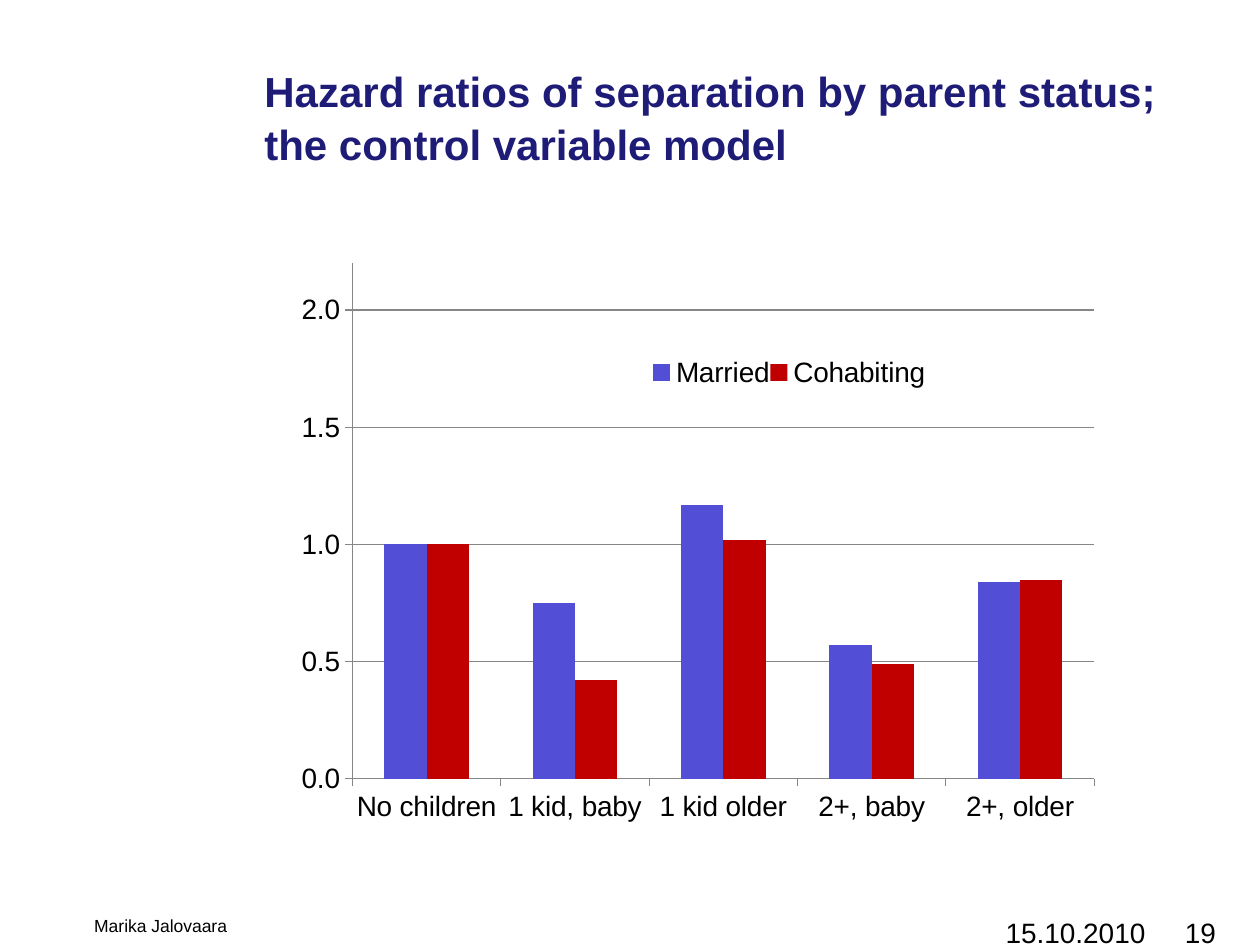
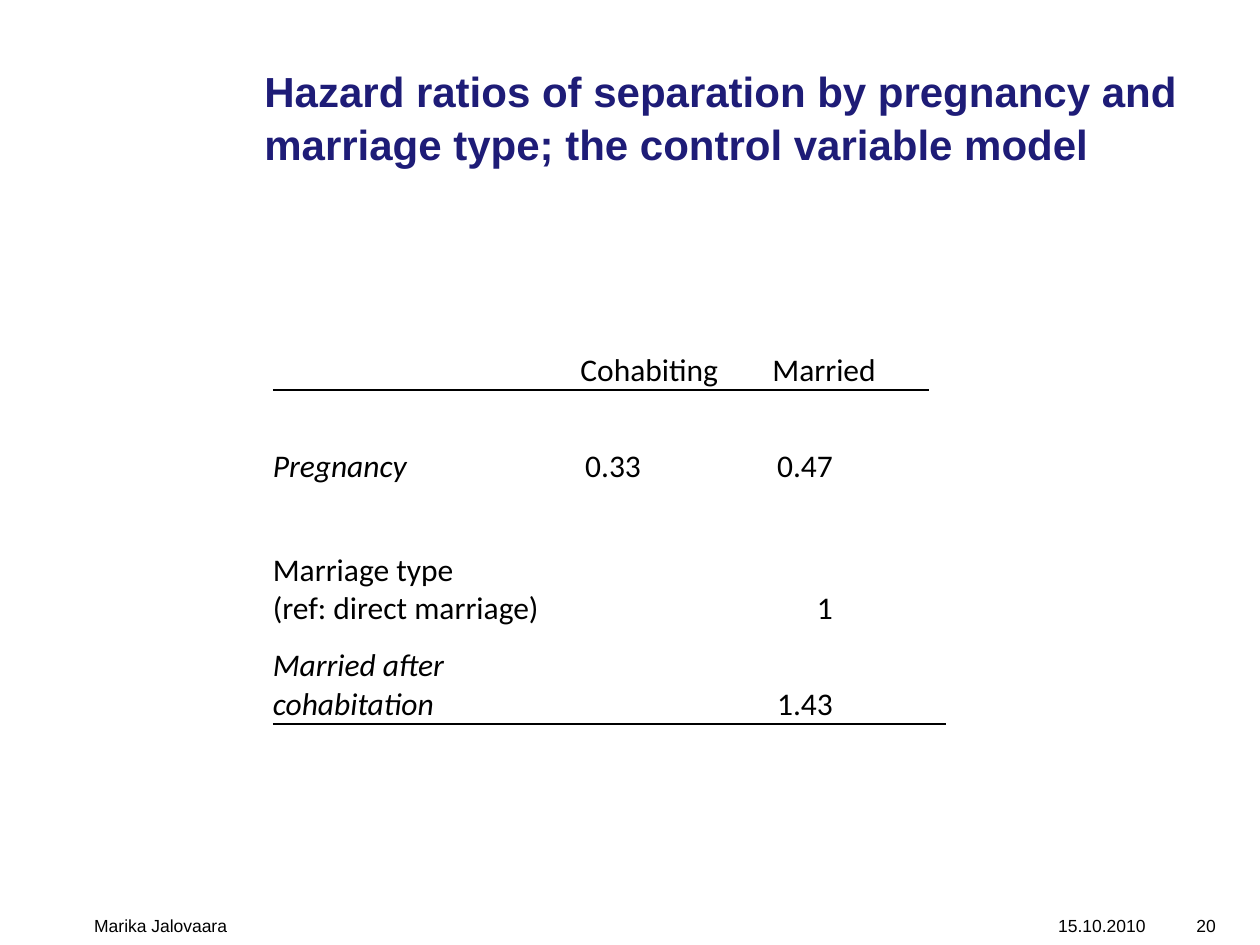
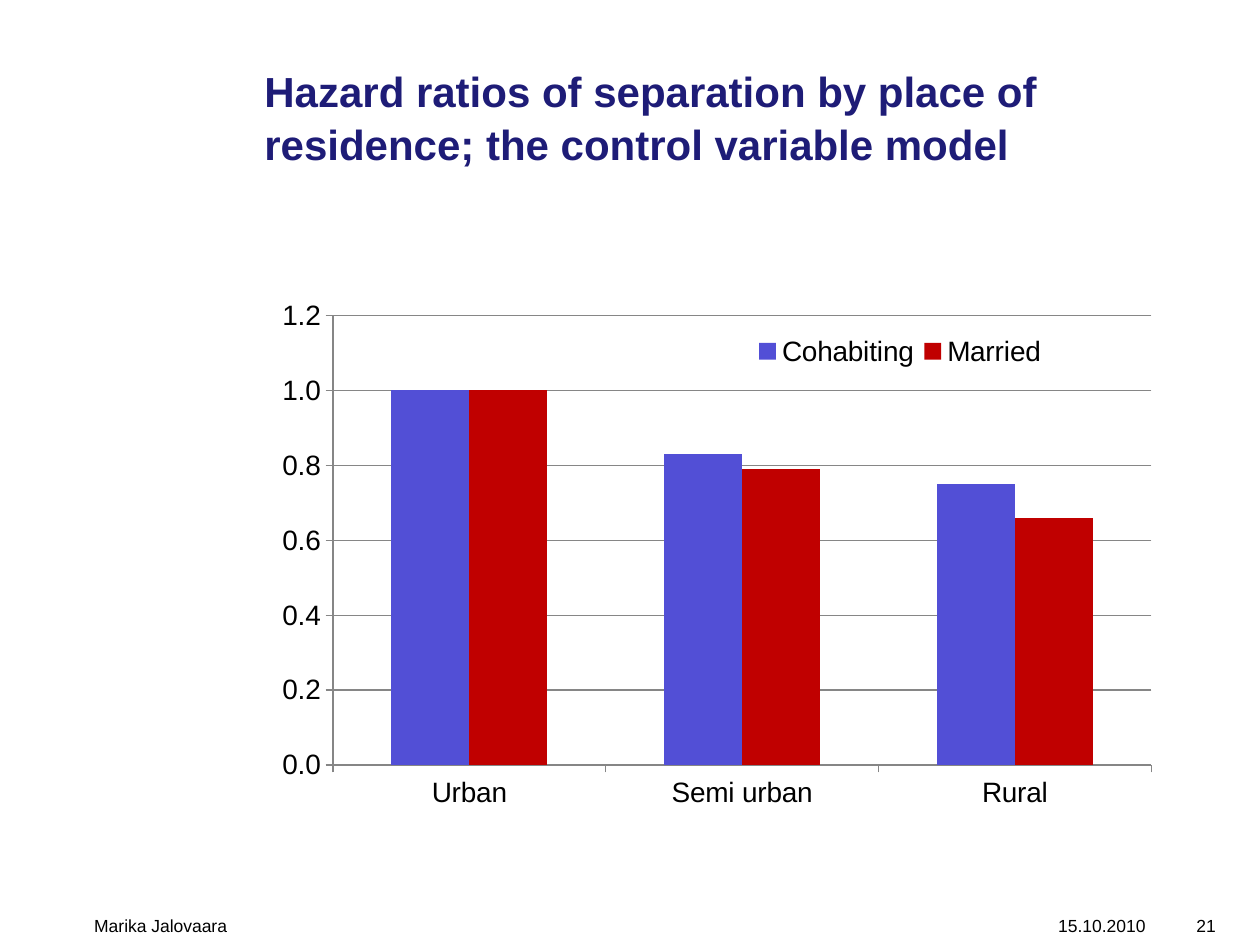
import pptx
import pptx.chart.data
import pptx.dml.color
import pptx.enum.chart
import pptx.enum.text
import pptx.oxml
import pptx.oxml.ns
import pptx.util

Cm, Pt = pptx.util.Cm, pptx.util.Pt
NAVY, BLACK, GREY = "1E1C77", "000000", "868686"
BLUE, RED = "524FD6", "C00000"
LEFT, RIGHT = pptx.enum.text.PP_ALIGN.LEFT, pptx.enum.text.PP_ALIGN.RIGHT
BOTTOM = pptx.enum.text.MSO_ANCHOR.BOTTOM


def tint(code):
    return pptx.dml.color.RGBColor.from_string(code)


def write(frame, text, size=10, font="Arial", color=BLACK, bold=False,
          slant=False, align=LEFT, lead=None):
    frame.word_wrap = True
    para = frame.paragraphs[0]
    para.text = text
    para.alignment = align
    if lead:
        para.line_spacing = Pt(lead)
    for run in para.runs:
        run.font.size = Pt(size)
        run.font.name = font
        run.font.bold = bold
        run.font.italic = slant
        run.font.color.rgb = tint(color)


deck = pptx.Presentation()
deck.slide_width, deck.slide_height = Cm(25.4), Cm(19.05)

# Titles and footers; the first slide has a larger date and number
heads = [
    ("Hazard ratios of separation by parent status; the control variable model", 16),
    ("Hazard ratios of separation by pregnancy and marriage type; the control variable model", 10),
    ("Hazard ratios of separation by place of residence; the control variable model", 10),
]
slides = []
for page, (head, size) in enumerate(heads, 19):
    slide = deck.slides.add_slide(deck.slide_layouts[6])
    slides.append(slide)
    frame = slide.shapes.add_textbox(Cm(5.08), Cm(0.43), Cm(19.48), Cm(3.1)).text_frame
    frame.vertical_anchor = BOTTOM
    write(frame, head, size=24, color=NAVY, bold=True, lead=30)
    for text, left, width, points, align in [
        ("15.10.2010", 19.41, 3.68, size, RIGHT),
        ("Marika Jalovaara", 1.9, 17.4, 10, LEFT),
        (str(page), 23.11, 1.4, size, RIGHT),
    ]:
        frame = slide.shapes.add_textbox(Cm(left), Cm(18.33), Cm(width), Cm(0.56)).text_frame
        frame.margin_left = frame.margin_right = 0
        write(frame, text, size=points, align=align)

# Column charts: slide, place, top and step of scale, legend box, data
charts = [
    (slides[0], (5.55, 4.56, 17.27, 13.11), 2.2, 0.5, (0.44, 0.19, 0.32, 0.07),
     ["No children", "1 kid, baby", "1 kid older", "2+, baby", "2+, older"],
     {"Married": [1, 0.75, 1.17, 0.57, 0.84],
      "Cohabiting": [1, 0.42, 1.02, 0.49, 0.85]}),
    (slides[2], (5, 5.71, 19.05, 11.43), 1.2, 0.2, (0.53, 0.08, 0.32, 0.08),
     ["Urban", "Semi urban", "Rural"],
     {"Cohabiting": [1, 0.83, 0.75], "Married": [1, 0.79, 0.66]}),
]
for slide, place, top, step, box, names, rows in charts:
    data = pptx.chart.data.CategoryChartData()
    data.categories = names
    for name, nums in rows.items():
        data.add_series(name, nums)
    kind = pptx.enum.chart.XL_CHART_TYPE.COLUMN_CLUSTERED
    chart = slide.shapes.add_chart(kind, *map(Cm, place), data).chart
    chart.has_title = False
    chart.font.size, chart.font.name = Pt(16), "Arial"
    chart.font.color.rgb = tint(BLACK)

    plot = chart.plots[0]
    plot.gap_width, plot.overlap = 150, 0
    plot.vary_by_categories = False
    for series, color in zip(plot.series, [BLUE, RED]):
        series.format.fill.solid()
        series.format.fill.fore_color.rgb = tint(color)

    # The red series counts as the first
    for order, rank in zip(chart._chartSpace.xpath("c:chart//c:ser/c:order"), "10"):
        order.set("val", rank)

    scale = chart.value_axis
    scale.minimum_scale, scale.maximum_scale, scale.major_unit = 0, top, step
    scale.tick_labels.number_format = "0.0"
    scale.tick_labels.number_format_is_linked = False
    scale.has_major_gridlines = True
    for part in [scale, scale.major_gridlines, chart.category_axis]:
        part.format.line.color.rgb = tint(GREY)

    chart.has_legend = True
    chart.legend.position = pptx.enum.chart.XL_LEGEND_POSITION.RIGHT
    chart.legend.include_in_layout = True

    # Fixed places of the plot and the legend
    area = chart._chartSpace.xpath("c:chart/c:plotArea")[0]
    key = chart._chartSpace.xpath("c:chart/c:legend")[0]
    for node, spot, inner, sides in [
        (area, 0, '<c:layoutTarget val="inner"/>', (0.09, 0.057, 0.866, 0.793)),
        (key, 1, "", box),
    ]:
        for old in node.xpath("c:layout"):
            node.remove(old)
        marks = "".join(f'<c:{tag} val="{num}"/>' for tag, num in zip("xywh", sides))
        node.insert(spot, pptx.oxml.parse_xml(
            f'<c:layout {pptx.oxml.ns.nsdecls("c")}><c:manualLayout>{inner}'
            f'<c:xMode val="edge"/><c:yMode val="edge"/>{marks}'
            '</c:manualLayout></c:layout>'))

# Table of pregnancy and marriage type
wide = [6.2, 1.22, 1.93, 0.36, 0.36, 1.22, 1.93, 0.36]
high = [1.93, 1.93, 0.94, 1.93, 1.93]
table = slides[1].shapes.add_table(
    len(high), len(wide), Cm(5.5), Cm(5.93), Cm(sum(wide)), Cm(sum(high))).table
table.first_row = table.horz_banding = False
table._tbl.xpath("a:tblPr/a:tableStyleId")[0].text = "{2D5ABB26-0587-4C30-8999-92F81FD0307C}"
for col, size in zip(table.columns, wide):
    col.width = Cm(size)
for row, size in zip(table.rows, high):
    row.height = Cm(size)
for row, col in [(0, 1), (0, 5), (1, 2), (2, 2), (2, 6), (4, 6)]:
    table.cell(row, col).merge(table.cell(row, col + 1))

# Rules: row to side and number of cells; every other side has no line
rules = {0: ("lnB", 7), 1: ("lnT", 7), 4: ("lnB", 8)}
ink = f'<a:solidFill><a:srgbClr val="{BLACK}"/></a:solidFill>'
for row in range(len(high)):
    ruled, count = rules.get(row, ("", 0))
    for col in range(len(wide)):
        cell = table.cell(row, col)
        cell.margin_left = cell.margin_right = cell.margin_top = cell.margin_bottom = 0
        cell.vertical_anchor = BOTTOM
        for side in ["lnL", "lnR", "lnT", "lnB"]:
            fill = ink if side == ruled and col < count else "<a:noFill/>"
            cell._tc.get_or_add_tcPr().append(pptx.oxml.parse_xml(
                f'<a:{side} {pptx.oxml.ns.nsdecls("a")} w="12700">{fill}</a:{side}>'))
        cell.fill.background()

for row, col, text, slant in [
    (0, 1, "Cohabiting", False),
    (0, 5, "Married", False),
    (1, 0, "Pregnancy", True),
    (1, 1, "0.33", False),
    (1, 5, "0.47", False),
    (3, 0, "Marriage type\n(ref: direct marriage)", False),
    (3, 5, "1", False),
    (4, 0, "Married after cohabitation", True),
    (4, 5, "1.43", False),
]:
    write(table.cell(row, col).text_frame, text, size=18, font="Calibri",
          slant=slant, align=RIGHT if row and col else LEFT)

deck.save("out.pptx")
